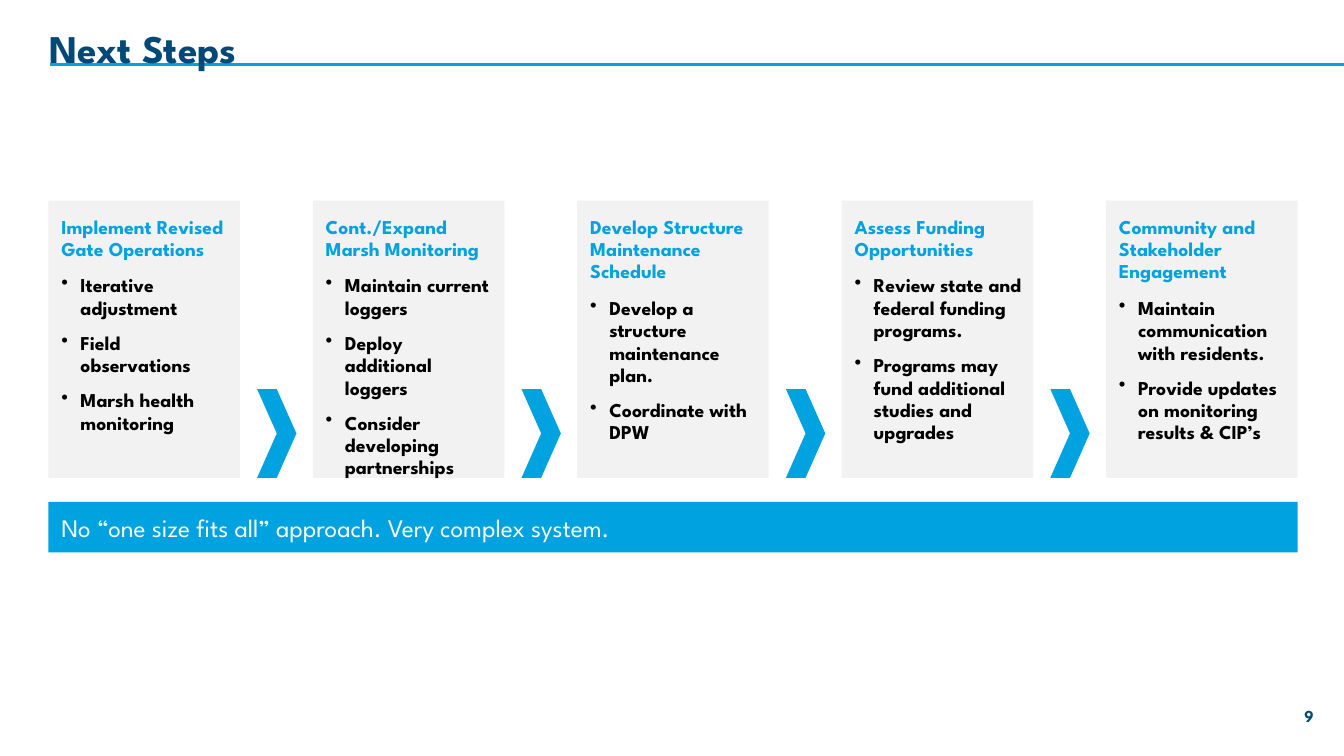
from lxml.etree import SubElement
from pptx import Presentation
from pptx.dml.color import RGBColor
from pptx.enum.shapes import MSO_CONNECTOR, MSO_SHAPE
from pptx.enum.text import MSO_ANCHOR, PP_ALIGN
from pptx.oxml.ns import qn
from pptx.util import Inches, Pt

FONT = "League Spartan"
COLORS = {"blue": "00A3E0", "navy": "004976", "gray": "F2F2F2",
          "black": "000000", "white": "FFFFFF"}
STEPS = [
    ("Implement Revised Gate Operations",
     ["Iterative adjustment", "Field observations",
      "Marsh health monitoring"]),
    ("Cont./Expand Marsh Monitoring",
     ["Maintain current loggers", "Deploy additional loggers",
      "Consider developing partnerships"]),
    ("Develop Structure Maintenance Schedule",
     ["Develop a structure maintenance plan.", "Coordinate with DPW"]),
    ("Assess Funding Opportunities",
     ["Review state and federal funding programs.",
      "Programs may fund additional studies and upgrades"]),
    ("Community and Stakeholder Engagement",
     ["Maintain communication with residents.",
      "Provide updates on monitoring results & CIP’s"]),
]


def color(name):
    return RGBColor.from_string(COLORS[name])


def add_block(slide, kind, box, fill):
    shape = slide.shapes.add_shape(kind, *map(Inches, box))
    shape.shadow.inherit = False
    shape.fill.solid()
    shape.fill.fore_color.rgb = color(fill)
    shape.line.fill.background()


def add_frame(slide, box, anchor=MSO_ANCHOR.TOP):
    frame = slide.shapes.add_textbox(*map(Inches, box)).text_frame
    frame.word_wrap = True
    frame.vertical_anchor = anchor
    return frame


def add_run(para, text, size, shade, bold=True):
    run = para.add_run()
    run.text = text
    run.font.name = FONT
    run.font.size = Pt(size)
    run.font.bold = bold
    run.font.color.rgb = color(shade)


def add_bullet(para):
    props = para._p.get_or_add_pPr()
    props.set("marL", str(Inches(0.19)))
    props.set("indent", str(Inches(-0.19)))
    SubElement(props, qn("a:buChar")).set("char", "•")


def add_title(slide, box):
    """Place the heading over a rule that runs to the right edge."""
    left, top, width, height = box
    rule = slide.shapes.add_connector(
        MSO_CONNECTOR.STRAIGHT, Inches(left + 0.11), Inches(top + 0.43),
        Inches(13.33), Inches(top + 0.43))
    rule.line.color.rgb = color("blue")
    rule.line.width = Pt(2.25)
    SubElement(rule._element.spPr, qn("a:effectLst"))
    para = add_frame(slide, box, MSO_ANCHOR.BOTTOM).paragraphs[0]
    para.line_spacing = 0.9
    add_run(para, "Next Steps", 28, "navy")


def add_card(slide, box, head, items):
    left, top, width, height = box
    add_block(slide, MSO_SHAPE.RECTANGLE, box, "gray")
    frame = add_frame(slide, (left + 0.03, top + 0.1, width - 0.04, height - 0.2))
    para = frame.paragraphs[0]
    para.line_spacing = Pt(16)
    para.space_after = Pt(4)
    add_run(para, head, 14, "blue")
    for item in items:
        para = frame.add_paragraph()
        add_bullet(para)
        para.line_spacing = Pt(16)
        para.space_before = Pt(6)
        para.space_after = Pt(3)
        add_run(para, item, 14, "black")


def add_steps(slide, box):
    """Spread the cards evenly, with a chevron in each gap."""
    left, top, width, height = box
    card = 1.9
    pitch = (width - card) / (len(STEPS) - 1)
    for i, (head, items) in enumerate(STEPS):
        x = left + i * pitch
        add_card(slide, (x, top, card, height), head, items)
        if i < len(STEPS) - 1:
            add_block(slide, MSO_SHAPE.CHEVRON,
                      (x + 2.07, top + height - 0.88, 0.39, 0.88), "blue")


def add_banner(slide, box):
    left, top, width, height = box
    add_block(slide, MSO_SHAPE.RECTANGLE, box, "blue")
    frame = add_frame(slide, (left + 0.03, top + 0.05, 9.04, height - 0.11))
    para = frame.paragraphs[0]
    para.line_spacing = Pt(22)
    para.space_after = Pt(2)
    add_run(para, "No “one size fits all” approach. Very complex system.",
            18, "white", False)


def add_number(slide, box):
    para = add_frame(slide, box, MSO_ANCHOR.MIDDLE).paragraphs[0]
    para.alignment = PP_ALIGN.RIGHT
    add_run(para, "9", 12, "navy")


def main():
    deck = Presentation()
    deck.slide_width = Inches(13.33)
    deck.slide_height = Inches(7.5)
    slide = deck.slides.add_slide(deck.slide_layouts[6])
    add_title(slide, (0.39, 0.21, 11.5, 0.55))
    add_steps(slide, (0.48, 1.99, 12.39, 2.75))
    add_banner(slide, (0.48, 4.98, 12.39, 0.5))
    add_number(slide, (10.13, 6.96, 3, 0.29))
    deck.save("out.pptx")


if __name__ == "__main__":
    main()
